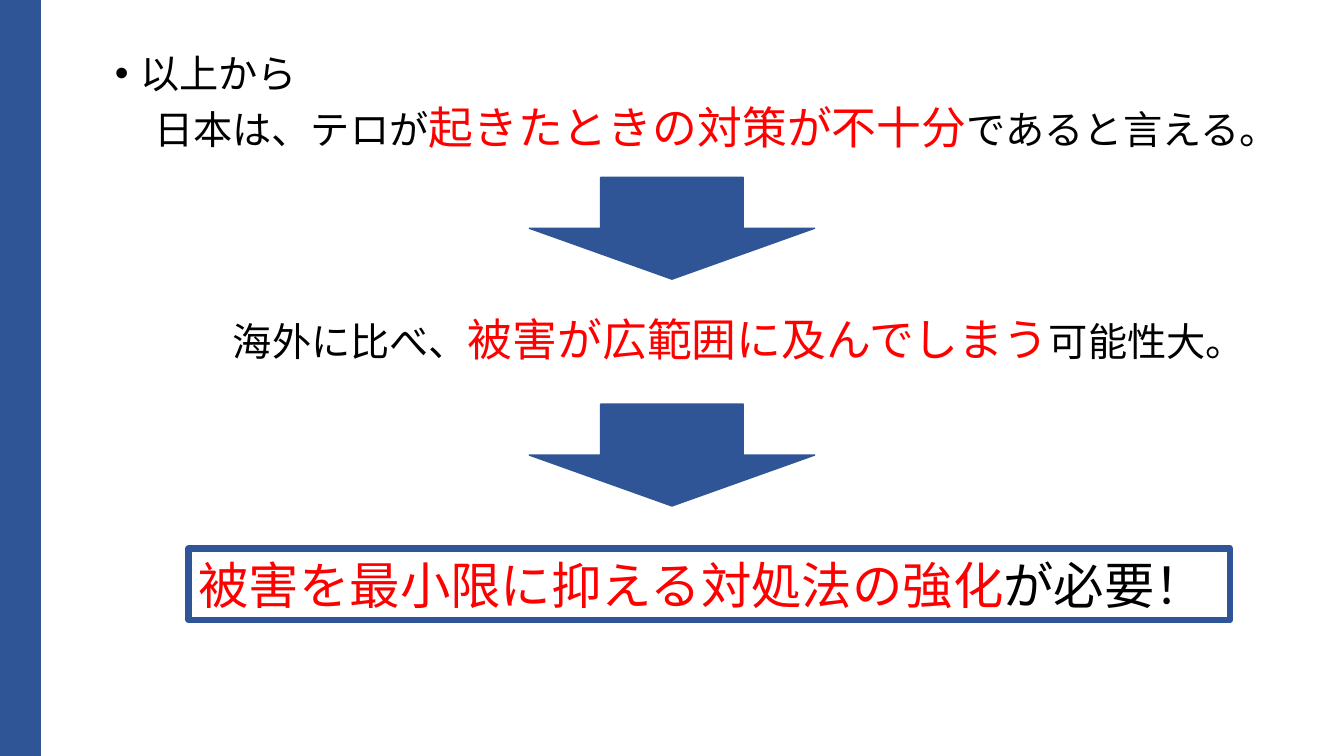
import pptx
import pptx.util
import pptx.dml.color
import pptx.enum.shapes
import pptx.enum.text
import pptx.oxml
import pptx.oxml.ns

Inches, Pt = pptx.util.Inches, pptx.util.Pt
MSO = pptx.enum.shapes.MSO_SHAPE
BLUE, RED, BLACK, WHITE = "2F5597", "FF0000", "000000", "FFFFFF"


def color(value):
    return pptx.dml.color.RGBColor.from_string(value)


def add_run(p, text, size=28, fill=BLACK, font="Calibri"):
    r = p.add_run()
    r.text = text
    r.font.size = Pt(size)
    r.font.name = font
    r.font.color.rgb = color(fill)


def add_box(s, kind, left, top, width, height, fill=BLUE, line_width=1):
    sp = s.shapes.add_shape(kind, Inches(left), Inches(top), Inches(width), Inches(height))
    sp.shadow.inherit = False
    sp.fill.solid()
    sp.fill.fore_color.rgb = color(fill)
    sp.line.color.rgb = color(BLUE)
    sp.line.width = Pt(line_width)
    return sp


def format_paragraph(p, margin, before=10, bullet=None):
    """Set spacing and indent; a bullet hangs to the left of the margin."""
    p.line_spacing = 0.8
    p.space_before = Pt(before)
    pPr = p._p.get_or_add_pPr()
    pPr.set("marL", str(Inches(margin)))
    pPr.set("indent", str(-Inches(margin) if bullet else 0))
    if bullet:
        font = pptx.oxml.ns.qn("a:buFont")
        pPr.append(pPr.makeelement(font, {"typeface": "Arial"}))
        mark = pptx.oxml.ns.qn("a:buChar")
        pPr.append(pPr.makeelement(mark, {"char": bullet}))
    else:
        pPr.append(pPr.makeelement(pptx.oxml.ns.qn("a:buNone"), {}))


def add_statement(tf, start, emphasis, end, margin, before=10):
    p = tf.add_paragraph()
    format_paragraph(p, margin, before)
    add_run(p, start)
    add_run(p, emphasis, size=32, fill=RED)
    add_run(p, end)


def fill_body(body):
    body.left, body.top = Inches(1.04), Inches(0.53)
    body.width, body.height = Inches(11.5), Inches(4.91)
    tf = body.text_frame
    tf.auto_size = pptx.enum.text.MSO_AUTO_SIZE.NONE
    tf.margin_right = 0
    p = tf.paragraphs[0]
    format_paragraph(p, 0.25, bullet="•")
    add_run(p, "以上から")
    add_statement(tf, "日本は、テロが", "起きたときの対策が不十分", "であると言える。", margin=0.39)
    add_statement(tf, "海外に比べ、", "被害が広範囲に及んでしまう", "可能性大。", margin=1.17, before=121)


def add_conclusion(s):
    sp = add_box(s, MSO.RECTANGLE, 1.87, 5.44, 10.33, 0.71, fill=WHITE, line_width=4.5)
    tf = sp.text_frame
    tf.vertical_anchor = pptx.enum.text.MSO_ANCHOR.MIDDLE
    p = tf.paragraphs[0]
    p.alignment = pptx.enum.text.PP_ALIGN.LEFT
    font = "Noto Sans CJK JP"
    add_run(p, "被害を最小限に抑える対処法の強化", size=36, fill=RED, font=font)
    add_run(p, "が必要！", size=36, font=font)


def main():
    prs = pptx.Presentation()
    prs.slide_width, prs.slide_height = Inches(13.33), Inches(7.5)
    s = prs.slides.add_slide(prs.slide_layouts[1])
    title = s.shapes.title
    title.element.getparent().remove(title.element)
    fill_body(s.placeholders[1])
    add_box(s, MSO.RECTANGLE, 0, 0, 0.4, 7.5)
    for top in (1.76, 4.01):
        add_box(s, MSO.DOWN_ARROW, 5.25, top, 2.83, 1.01)
    add_conclusion(s)
    prs.save("out.pptx")


if __name__ == "__main__":
    main()
